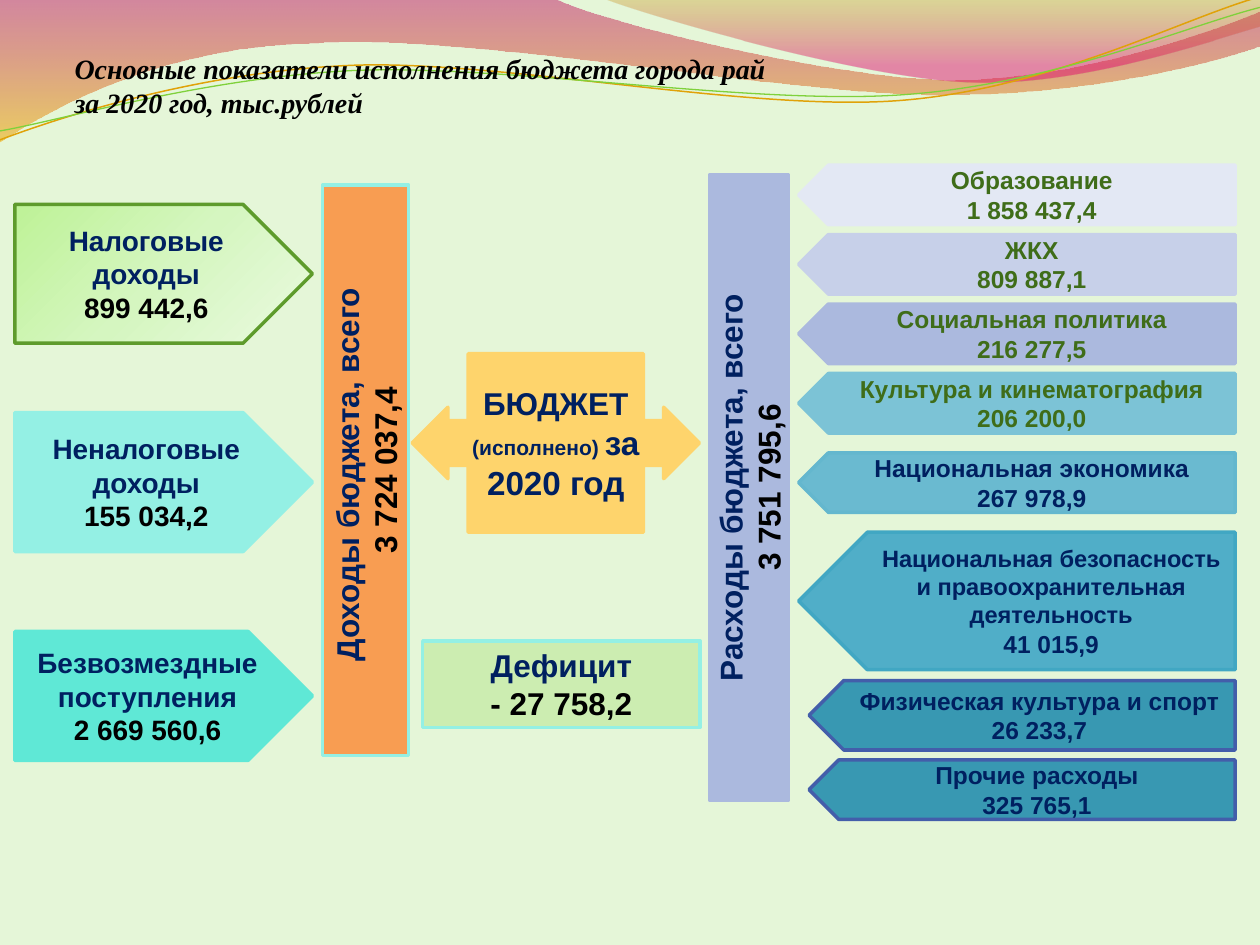
from pptx import Presentation
from pptx.dml.color import RGBColor
from pptx.enum.shapes import MSO_SHAPE
from pptx.enum.text import MSO_ANCHOR, MSO_AUTO_SIZE, PP_ALIGN
from pptx.oxml import parse_xml
from pptx.oxml.ns import nsdecls, qn
from pptx.util import Cm, Pt

RECT, PLATE = MSO_SHAPE.RECTANGLE, MSO_SHAPE.PENTAGON
ARROW, CALLOUT = MSO_SHAPE.LEFT_ARROW, MSO_SHAPE.LEFT_RIGHT_ARROW_CALLOUT
TOP, MIDDLE = MSO_ANCHOR.TOP, MSO_ANCHOR.MIDDLE
LEFT, CENTER = PP_ALIGN.LEFT, PP_ALIGN.CENTER
FIXED = MSO_AUTO_SIZE.NONE

HEX = {
    "back": "E5F6D8", "black": "000000", "navy": "002060", "moss": "3F6D19",
    "gold": "FED46C", "orange": "F89D52", "aqua": "94F0E4", "mint": "5FE8D6",
    "lilac": "ABB9DE", "lime": "CCEDB1", "leaf": "5E9B2C", "blue": "435EAA",
    "amber": "E0A209", "grass": "7FD13B",
}

# Content
TITLE = ["Основные показатели исполнения бюджета города рай",
         "за 2020 год, тыс.рублей"]
BUDGET = [[("БЮДЖЕТ ", 18), ("(исполнено) ", 12), ("за", 19)],
          [("2020 год", 19)]]
TOTALS = [  # name, sum, box, turn, fill, line
    ("Доходы бюджета, всего ", "3 724 037,4", (6.5, 3.73, 1.74, 11.5), 0,
     "orange", "aqua"),
    ("Расходы бюджета, всего", "3 751 795,6", (14.3, 3.53, 1.6, 12.6), 0,
     "lilac", "lilac"),
    ("Дефицит", "- 27 758,2", (10.44, 11, 1.75, 5.59), 90, "lime", "aqua"),
]
INCOME = [  # name, sum, top, height, fill, line, sum in the same paragraph
    ("Налоговые доходы", "899 442,6", 4.12, 2.8, None, "leaf", False),
    ("Неналоговые доходы", "155 034,2", 8.32, 2.8, "aqua", "aqua", False),
    ("Безвозмездные поступления", "2 669 560,6", 12.73, 2.6,
     "mint", "mint", True),
]
SPEND = [  # name, sum, gap above, left, height, fill, line, font, size, inset
    ("Образование", "1 858 437,4", 0, 16.1, 1.2, "E3E8F4", "E3E8F4", "moss", 14, True),
    ("ЖКХ", "809 887,1", 0.2, 16.1, 1.2, "C7D0E9", "C7D0E9", "moss", 14, True),
    ("Социальная политика", "216 277,5", 0.2, 16.1, 1.2, "ABB9DE", "ABB9DE", "moss", 14, False),
    ("Культура и кинематография", "206 200,0", 0.2, 16.1, 1.2, "7CC3D6", "7CC3D6", "moss", 14, False),
    ("Национальная экономика", "267 978,9", 0.4, 16.1, 1.2, "6ABAD0", "64B7CE", "navy", 14, True),
    ("Национальная безопасность и правоохранительная деятельность", "41 015,9",
     0.4, 16.1, 2.77, "50AEC8", "41A7C3", "navy", 13.5, True),
    ("Физическая культура и спорт", "26 233,7", 0.22, 16.31, 1.4, "3898B2", "blue", "navy", 14, True),
    ("Прочие расходы", "325 765,1", 0.2, 16.31, 1.2, "3898B2", "blue", "navy", 14, True),
]
RIGHT, FIRST = 24.9, 3.33

# Waves: start, then lines (2 numbers) and curves (6 numbers)
BANDS = [
    ([(0, 0), (11.18, -0.03), (12.09, 0.43, 16.87, 1.6, 19.25, 1.6),
      (21.67, 1.6, 24.33, 0.66, 25.4, 0.23), (25.43, 0.91),
      (24.97, 1.12, 22.1, 1.93, 18.95, 1.91),
      (15.8, 1.91, 9.7, 0.71, 6.53, 0.86),
      (3.28, 0.91, 1.17, 2.11, -0.03, 2.87), (0, 0)],
     [(0, "BD0059", 45), (100, "F0AB00", 55)]),
    ([(12.17, -0.03), (12.93, 0.28, 17.32, 1.57, 19.53, 1.65),
      (21.74, 1.75, 24.41, 0.81, 25.4, 0.53), (25.4, 0), (12.17, -0.03)],
     [(0, "C38B00", 30), (80, "E1006B", 45)]),
]
THREADS = [
    ([(0, 2.82), (1.22, 2.36, 4.01, 1.45, 7.04, 1.32),
      (10.03, 1.19, 15.06, 2.26, 18.11, 2.03),
      (21.16, 1.8, 23.83, 0.38, 25.35, -0.05)], "amber", 0.85),
    ([(0, 2.64), (1.19, 2.44, 4.17, 1.55, 7.19, 1.42),
      (10.24, 1.3, 15.16, 2.13, 18.21, 1.91),
      (21.23, 1.7, 23.9, 0.53, 25.4, 0.15)], "grass", 0.75),
]


def color(name):
    return RGBColor.from_string(HEX.get(name, name))


def blend(shape, stops, angle):
    """Fill with a gradient; each stop is position, colour, opacity."""
    marks = "".join(
        f'<a:gs pos="{pos * 1000}"><a:srgbClr val="{tint}">'
        f'<a:alpha val="{alpha * 1000}"/></a:srgbClr></a:gs>'
        for pos, tint, alpha in stops)
    shape.fill.background()
    props = shape._element.spPr
    props.replace(props.find(qn("a:noFill")), parse_xml(
        f'<a:gradFill {nsdecls("a")} rotWithShape="1"><a:gsLst>{marks}</a:gsLst>'
        f'<a:lin ang="{angle * 60000}" scaled="0"/></a:gradFill>'))


def trace(steps, closed):
    """Draw the outline through the end points, then bend its curved parts."""
    ends = [(Cm(s[-2]), Cm(s[-1])) for s in steps]
    form = slide.shapes.build_freeform(*ends[0])
    form.add_line_segments(ends[1:], close=closed)
    wave = form.convert_to_shape()
    wave.shadow.inherit = False
    x0, y0 = (min(axis) for axis in zip(*ends))
    parts = list(wave._element.iter(qn("a:lnTo")))
    for part, step in zip(parts, steps[1:]):
        if len(step) == 6:
            pts = "".join(f'<a:pt x="{Cm(x) - x0}" y="{Cm(y) - y0}"/>'
                          for x, y in zip(step[::2], step[1::2]))
            part.getparent().replace(part, parse_xml(
                f'<a:cubicBezTo {nsdecls("a")}>{pts}</a:cubicBezTo>'))
    return wave


def write(frame, lines, face="Arial"):
    """Each line is a list of (text, size, colour) runs; None breaks it."""
    frame.word_wrap = True
    for i, line in enumerate(lines):
        para = frame.paragraphs[0] if i == 0 else frame.add_paragraph()
        para.alignment = CENTER
        for part in line:
            if part is None:
                para.add_line_break()
                continue
            text, size, tint = part
            run = para.add_run()
            run.text = text
            run.font.name, run.font.size = face, Pt(size)
            run.font.bold = True
            run.font.color.rgb = color(tint)


def block(kind, box, fill, line, lines, inset=(0.25, 0.13)):
    shape = slide.shapes.add_shape(kind, *map(Cm, box))
    shape.shadow.inherit = False
    if fill:
        shape.fill.solid()
        shape.fill.fore_color.rgb = color(fill)
    shape.line.color.rgb = color(line)
    shape.line.width = Pt(2)
    frame = shape.text_frame
    frame.vertical_anchor = MIDDLE
    frame.margin_left = frame.margin_right = Cm(inset[0])
    frame.margin_top = frame.margin_bottom = Cm(inset[1])
    write(frame, lines)
    return shape


deck = Presentation()
deck.slide_width, deck.slide_height = Cm(25.4), Cm(19.05)
slide = deck.slides.add_slide(deck.slide_layouts[5])
slide.background.fill.solid()
slide.background.fill.fore_color.rgb = color("back")

# Waves at the top
for steps, stops in BANDS:
    band = trace(steps, True)
    blend(band, stops, 90)
    band.line.fill.background()
for steps, tint, width in THREADS:
    thread = trace(steps, False)
    thread.fill.background()
    thread.line.color.rgb = color(tint)
    thread.line.width = Pt(width)

# Budget in the middle
hub = block(CALLOUT, (8.31, 7.13, 5.79, 3.6), "gold", "gold",
            [[(*run, "navy") for run in line] for line in BUDGET], (0, 0))
for i, value in enumerate((0.25, 0.2, 0.2, 0.61)):
    hub.adjustments[i] = value

# Totals and deficit
for name, total, box, turn, fill, line in TOTALS:
    bar = block(RECT, box, fill, line,
                [[(name, 18, "navy")], [(total, 18, "black")]])
    bar.rotation = turn
    bar.text_frame._txBody.bodyPr.set("vert", "vert270")

# Income
for name, total, top, height, fill, line, joined in INCOME:
    label, value = (name, 16, "navy"), (total, 16, "black")
    lines = [[label, None, value]] if joined else [[label], [value]]
    plate = block(PLATE, (0.3, top, 6, height), fill, line, lines, (0.2, 0.1))
    if not fill:
        blend(plate, [(0, "BEF297", 100), (50, "D5F6C0", 100),
                      (100, "EAFAE0", 100)], 45)

# Spending
top = FIRST
for name, total, gap, left, height, fill, line, tint, size, inset in SPEND:
    top += gap
    arrow = block(ARROW, (left, top, RIGHT - left, height), fill, line,
                  [[(name, size, tint)], [(total, 14, tint)]],
                  (0.25, 0.13) if inset else (0, 0))
    arrow.adjustments[0], arrow.adjustments[1] = 1, 0.5
    top += height

# Title, in front of the waves
title = slide.shapes.title
title.left, title.top, title.width, title.height = map(Cm, (0, 0.91, 25.4, 1.63))
frame = title.text_frame
frame.auto_size, frame.vertical_anchor = FIXED, TOP
write(frame, [[(text, 16, "black")] for text in TITLE], "Times New Roman")
for para in frame.paragraphs:
    para.alignment = LEFT
    para.runs[0].font.italic = True
    para._p.get_or_add_pPr().set("indent", str(Cm(1.25)))
slide.shapes._spTree.append(title._element)

deck.save("out.pptx")
